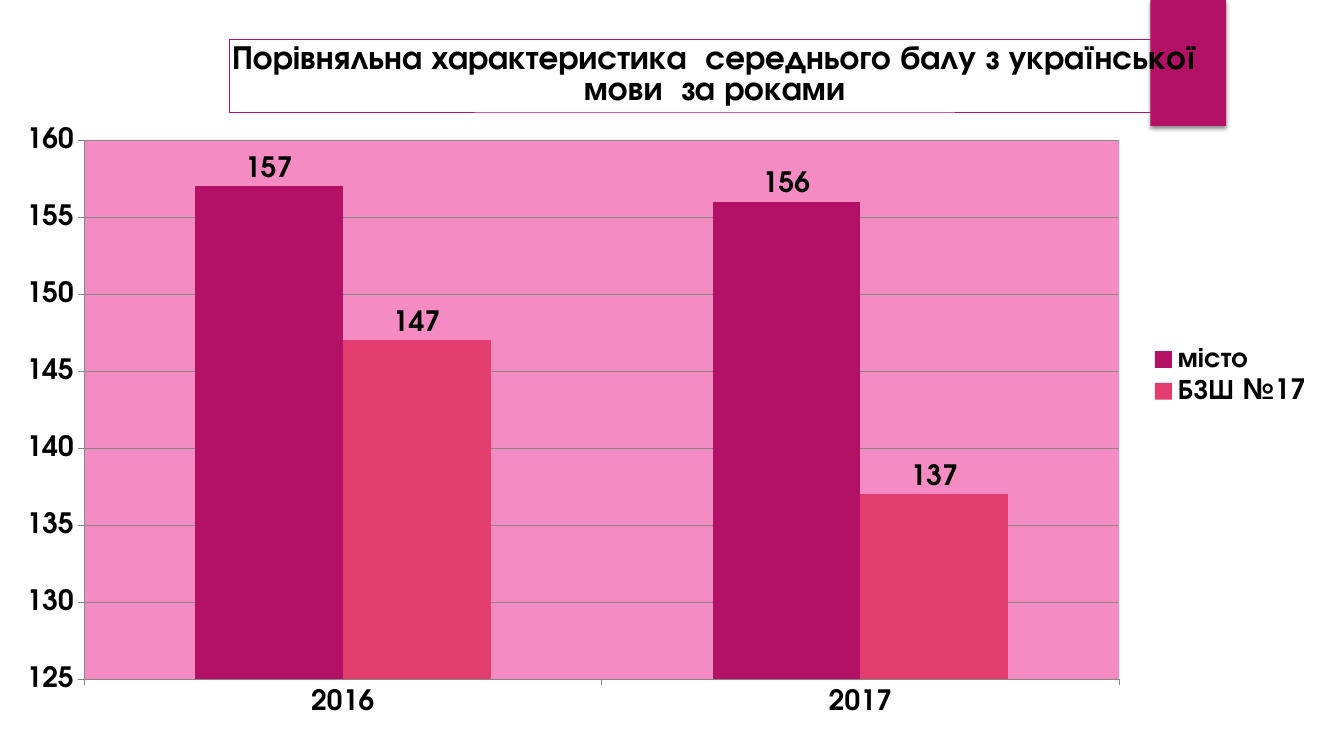
from dataclasses import dataclass

from lxml.etree import SubElement
from pptx import Presentation
from pptx.chart.axis import CategoryAxis, ValueAxis
from pptx.chart.chart import Chart
from pptx.chart.data import CategoryChartData
from pptx.dml.color import RGBColor
from pptx.enum.chart import XL_CHART_TYPE, XL_LABEL_POSITION, XL_LEGEND_POSITION, XL_TICK_MARK
from pptx.enum.shapes import MSO_SHAPE
from pptx.enum.text import PP_ALIGN
from pptx.oxml import parse_xml
from pptx.oxml.ns import nsdecls, qn
from pptx.slide import Slide
from pptx.text.text import Font
from pptx.util import Inches, Length, Pt

MAGENTA = RGBColor(0xB3, 0x11, 0x66)
ROSE = RGBColor(0xE3, 0x3D, 0x6F)
PINK = RGBColor(0xF4, 0x8C, 0xC3)
GRAY = RGBColor(0x87, 0x87, 0x87)
BLACK = RGBColor(0, 0, 0)
FONT_NAME = "TeX Gyre Adventor"
FONT_SIZE = Pt(20)
TITLE_SIZE = Pt(24)
TITLE = "Порівняльна характеристика  середнього балу з української\nмови  за роками"
YEARS = ["2016", "2017"]


@dataclass(frozen=True)
class ScoreSeries:
    name: str
    scores: tuple[int, ...]
    color: RGBColor


SCORES = [
    ScoreSeries("місто", (157, 156), MAGENTA),
    ScoreSeries("БЗШ №17", (147, 137), ROSE),
]


def set_font(font: Font, size: Length = FONT_SIZE) -> None:
    font.name = FONT_NAME
    font.size = size
    font.bold = True
    font.color.rgb = BLACK


def place(element, index: int, **settings) -> None:
    for old_layout in element.findall(qn("c:layout")):
        element.remove(old_layout)
    layout = parse_xml(f"<c:layout {nsdecls('c')}/>")
    manual = SubElement(layout, qn("c:manualLayout"))
    for name, value in settings.items():
        SubElement(manual, qn(f"c:{name}")).set("val", str(value))
    element.insert(index, layout)


def add_ribbon(slide: Slide) -> None:
    ribbon = slide.shapes.add_shape(
        MSO_SHAPE.RECTANGLE, Inches(11.41), Inches(0), Inches(0.75), Inches(1.25)
    )
    ribbon.shadow.inherit = False
    ribbon.fill.solid()
    ribbon.fill.fore_color.rgb = MAGENTA
    ribbon.line.fill.background()
    effects = ribbon._element.spPr.find(qn("a:effectLst"))
    effects.append(parse_xml(
        f'<a:outerShdw {nsdecls("a")} blurRad="{Pt(3)}" dist="{Pt(2)}" dir="5400000" '
        'rotWithShape="0"><a:srgbClr val="000000"><a:alpha val="45000"/></a:srgbClr></a:outerShdw>'
    ))


def style_axis(axis: CategoryAxis | ValueAxis) -> None:
    axis.major_tick_mark = XL_TICK_MARK.OUTSIDE
    axis.minor_tick_mark = XL_TICK_MARK.NONE
    axis.format.line.color.rgb = GRAY
    axis.format.line.width = Pt(0.75)
    set_font(axis.tick_labels.font)


def style_title(chart: Chart) -> None:
    title = chart.chart_title
    title.text_frame.text = TITLE
    for paragraph in title.text_frame.paragraphs:
        paragraph.alignment = PP_ALIGN.CENTER
        set_font(paragraph.runs[0].font, TITLE_SIZE)
    title.format.line.color.rgb = MAGENTA
    title.format.line.width = Pt(0.25)
    element = title._element
    place(element, 1, xMode="edge", yMode="edge", x=0.173, y=0.025)
    element.find(qn("c:overlay")).set("val", "1")


def style_plot(chart: Chart) -> None:
    plot = chart.plots[0]
    plot.gap_width = 150
    plot.overlap = 0
    plot.vary_by_categories = False
    for series, score in zip(plot.series, SCORES):
        series.format.fill.solid()
        series.format.fill.fore_color.rgb = score.color
        labels = series.data_labels
        labels.show_value = True
        labels.position = XL_LABEL_POSITION.OUTSIDE_END
        set_font(labels.font)
    plot_area = chart._chartSpace.chart.plotArea
    place(plot_area, 0, layoutTarget="inner", xMode="edge", yMode="edge",
          x=0.0635, y=0.168, w=0.782, h=0.761)
    plot_area.append(parse_xml(
        f'<c:spPr {nsdecls("c", "a")}><a:solidFill><a:srgbClr val="{PINK}"/></a:solidFill></c:spPr>'
    ))


def add_score_chart(slide: Slide) -> None:
    data = CategoryChartData()
    data.categories = YEARS
    for score in SCORES:
        data.add_series(score.name, score.scores)
    chart = slide.shapes.add_chart(
        XL_CHART_TYPE.COLUMN_CLUSTERED, Inches(0), Inches(0.21), Inches(13.13), Inches(7.03), data
    ).chart
    set_font(chart.font)
    style_title(chart)
    style_axis(chart.category_axis)
    style_axis(chart.value_axis)
    chart.value_axis.minimum_scale = 125
    chart.value_axis.maximum_scale = 160
    chart.value_axis.major_unit = 5
    chart.value_axis.major_gridlines.format.line.color.rgb = GRAY
    chart.value_axis.major_gridlines.format.line.width = Pt(0.75)
    chart.has_legend = True
    chart.legend.position = XL_LEGEND_POSITION.RIGHT
    chart.legend.include_in_layout = False
    set_font(chart.legend.font)
    style_plot(chart)


def main() -> None:
    presentation = Presentation()
    presentation.slide_width = Inches(13.33)
    presentation.slide_height = Inches(7.5)
    slide = presentation.slides.add_slide(presentation.slide_layouts[6])
    add_ribbon(slide)
    add_score_chart(slide)
    presentation.save("out.pptx")


if __name__ == "__main__":
    main()
